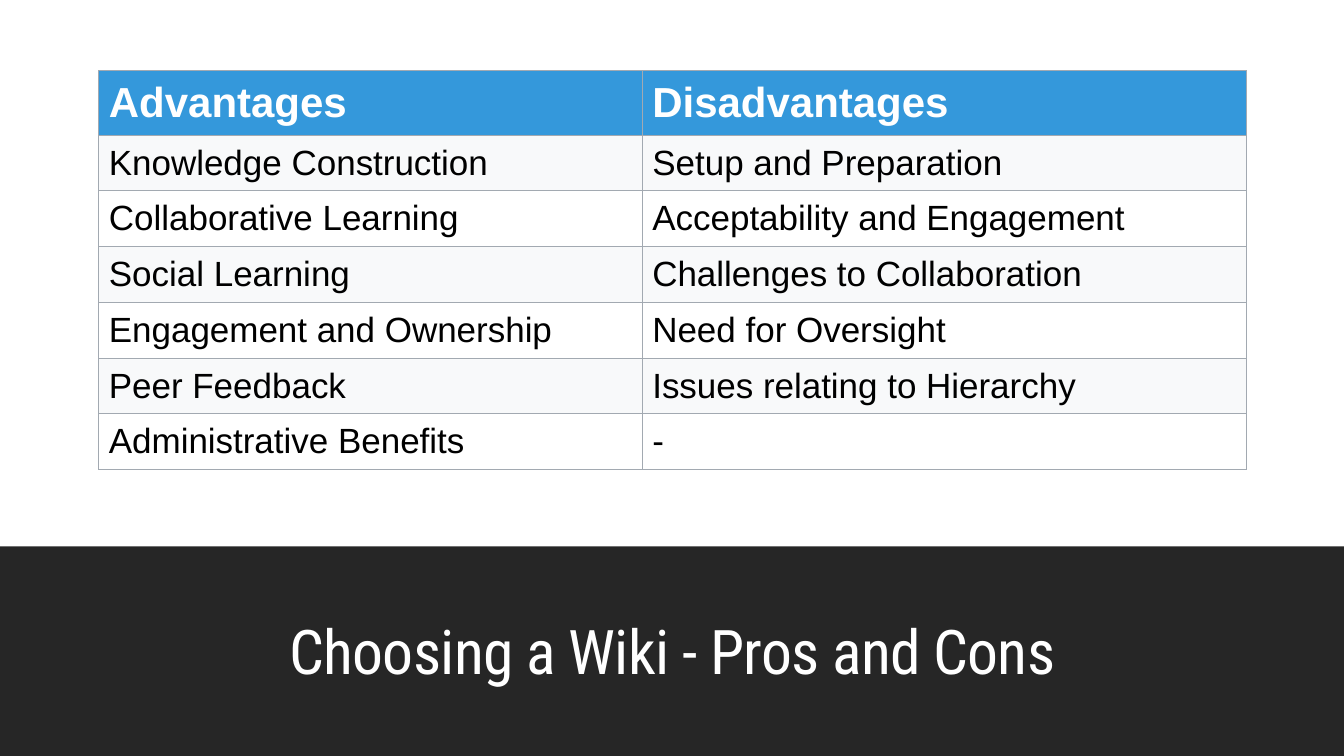
from dataclasses import dataclass

from lxml.etree import SubElement
from pptx import Presentation
from pptx.dml.color import RGBColor
from pptx.enum.shapes import MSO_SHAPE
from pptx.enum.text import MSO_ANCHOR, PP_ALIGN
from pptx.oxml.ns import qn
from pptx.util import Inches, Pt


@dataclass(frozen=True)
class Theme:
    paper: str = "FFFFFF"
    band: str = "262626"
    header: str = "3498DB"
    stripe: str = "F8F9FA"
    grid: str = "A2A9B1"
    ink: str = "000000"
    title_font: str = "Roboto Condensed"
    table_font: str = "Arial"
    title_size: int = 44
    header_size: int = 30
    body_size: int = 25
    grid_width: float = 0.75


PROS_AND_CONS = [
    ("Advantages", "Disadvantages"),
    ("Knowledge Construction", "Setup and Preparation"),
    ("Collaborative Learning", "Acceptability and Engagement"),
    ("Social Learning", "Challenges to Collaboration"),
    ("Engagement and Ownership", "Need for Oversight"),
    ("Peer Feedback", "Issues relating to Hierarchy"),
    ("Administrative Benefits", "-"),
]


class SlideBuilder:
    def __init__(self, slide, theme):
        self.slide = slide
        self.theme = theme
        self.paint(slide.background.fill, theme.paper)

    def paint(self, fill, color):
        fill.solid()
        fill.fore_color.rgb = RGBColor.from_string(color)

    def style_font(self, font, color, **values):
        font.color.rgb = RGBColor.from_string(color)
        for name, value in values.items():
            setattr(font, name, value)

    def band(self, left, top, width, height):
        band = self.slide.shapes.add_shape(
            MSO_SHAPE.RECTANGLE, *map(Inches, (left, top, width, height)))
        band.shadow.inherit = False
        self.paint(band.fill, self.theme.band)
        band.line.fill.background()

    def title(self, wording, left, top, width, height):
        heading = self.slide.shapes.title
        box = {"left": left, "top": top, "width": width, "height": height}
        for name, value in box.items():
            setattr(heading, name, Inches(value))
        self.slide.shapes.element.append(heading.element)
        heading.text_frame.text = wording
        heading.text_frame.vertical_anchor = MSO_ANCHOR.BOTTOM
        paragraph = heading.text_frame.paragraphs[0]
        paragraph.alignment = PP_ALIGN.CENTER
        paragraph.line_spacing = 0.9
        run = paragraph.runs[0]
        self.style_font(run.font, self.theme.paper, name=self.theme.title_font,
                        size=Pt(self.theme.title_size), bold=False)
        run.font._element.set("spc", "-50")

    def cell_borders(self, cell):
        properties = cell._tc.get_or_add_tcPr()
        for side in ("lnL", "lnR", "lnT", "lnB"):
            line = SubElement(properties, qn(f"a:{side}"),
                              w=str(Pt(self.theme.grid_width)))
            fill = SubElement(line, qn("a:solidFill"))
            SubElement(fill, qn("a:srgbClr"), val=self.theme.grid)

    def table(self, rows, left, top, column_widths, header_height, body_height):
        theme = self.theme
        height = header_height + body_height * (len(rows) - 1)
        table = self.slide.shapes.add_table(
            len(rows), len(column_widths), Inches(left), Inches(top),
            Inches(sum(column_widths)), Inches(height)).table
        for column, width in zip(table.columns, column_widths):
            column.width = Inches(width)
        for index, wordings in enumerate(rows):
            is_header = index == 0
            table.rows[index].height = Inches(header_height if is_header else body_height)
            if is_header:
                fill, color, size = theme.header, theme.paper, theme.header_size
            else:
                fill = theme.stripe if index % 2 else theme.paper
                color, size = theme.ink, theme.body_size
            for cell, wording in zip(table.rows[index].cells, wordings):
                cell.text = wording
                cell.vertical_anchor = MSO_ANCHOR.MIDDLE
                self.cell_borders(cell)
                self.paint(cell.fill, fill)
                run = cell.text_frame.paragraphs[0].runs[0]
                self.style_font(run.font, color, name=theme.table_font,
                                size=Pt(size), bold=is_header)


def main():
    presentation = Presentation()
    presentation.slide_width = Inches(13.33)
    presentation.slide_height = Inches(7.5)
    slide = presentation.slides.add_slide(presentation.slide_layouts[5])
    builder = SlideBuilder(slide, Theme())
    builder.band(0, 5.42, 13.33, 2.08)
    builder.title("Choosing a Wiki - Pros and Cons", 1.17, 5.74, 11, 1.13)
    builder.table(PROS_AND_CONS, 0.98, 0.7, (5.39, 5.99),
                  header_height=0.64, body_height=3.32 / 6)
    presentation.save("out.pptx")


if __name__ == "__main__":
    main()
